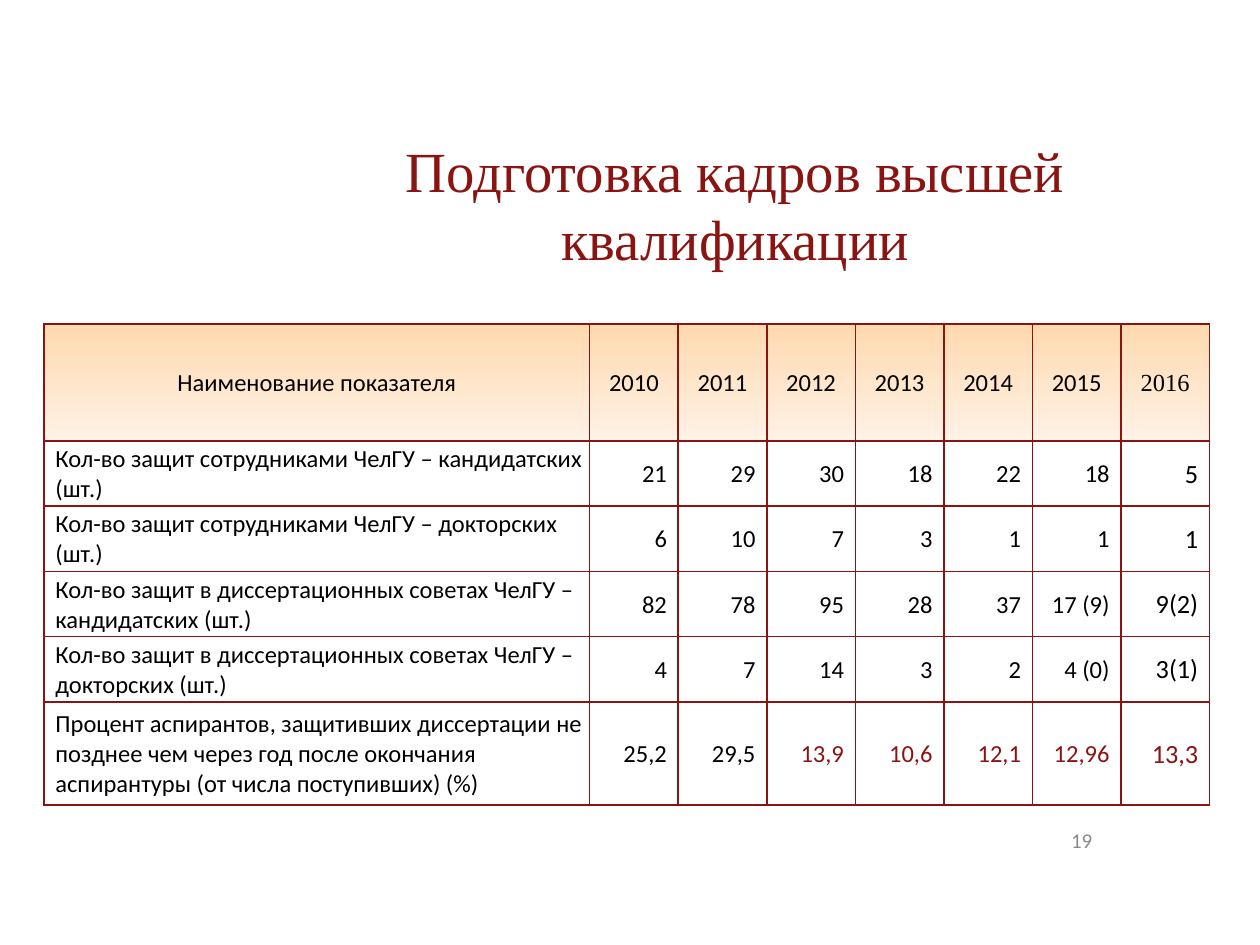
"""Build a slide with a table of postgraduate thesis defences by year."""
import pptx
import pptx.dml.color
import pptx.enum.text
import pptx.oxml.ns
import pptx.util
from lxml import etree

RGB = pptx.dml.color.RGBColor.from_string
ALIGN = pptx.enum.text.PP_ALIGN
MIDDLE = pptx.enum.text.MSO_ANCHOR.MIDDLE

THEME = {
    "accent": "8A1411", "text": "000000", "muted": "898989",
    "header": ("FFD9AF", "FFF2E6"),
    "body": "Calibri", "serif": "Times New Roman",
    "title_size": 32.4, "cell_size": 14, "latest_size": 15, "number_size": 12,
}

ROWS = [
    ["Наименование показателя", "2010", "2011", "2012", "2013", "2014", "2015", "2016"],
    ["Кол-во защит сотрудниками ЧелГУ – кандидатских (шт.)",
     "21", "29", "30", "18", "22", "18", "5"],
    ["Кол-во защит сотрудниками ЧелГУ – докторских (шт.)",
     "6", "10", "7", "3", "1", "1", "1"],
    ["Кол-во защит в диссертационных советах ЧелГУ – кандидатских (шт.)",
     "82", "78", "95", "28", "37", "17 (9)", "9(2)"],
    ["Кол-во защит в диссертационных советах ЧелГУ – докторских (шт.)",
     "4", "7", "14", "3", "2", "4 (0)", "3(1)"],
    ["Процент аспирантов, защитивших диссертации не позднее чем через год "
     "после окончания аспирантуры (от числа поступивших) (%)",
     "25,2", "29,5", "13,9", "10,6", "12,1", "12,96", "13,3"],
]

prs = pptx.Presentation()
prs.slide_width, prs.slide_height = pptx.util.Inches(10), pptx.util.Inches(7.5)
UNIT = prs.slide_width / 100


def grid(*cells):
    return [round(c * UNIT) for c in cells]


def write(tf, text, size, color, font, align, margins):
    tf.margin_left, tf.margin_top, tf.margin_right, tf.margin_bottom = map(pptx.util.Inches, margins)
    p = tf.paragraphs[0]
    p.add_run().text = text
    p.alignment = align
    p.font.size = pptx.util.Pt(size)
    p.font.name = font
    p.font.color.rgb = RGB(color)


s = prs.slides.add_slide(prs.slide_layouts[5])
title = s.shapes.title
title.left, title.top, title.width, title.height = grid(18.5, 9.9, 79.7, 12.5)
tf = title.text_frame
tf.vertical_anchor = MIDDLE
tf.word_wrap = True
tf.auto_size = pptx.enum.text.MSO_AUTO_SIZE.NONE
write(tf, "Подготовка кадров высшей квалификации", THEME["title_size"],
      THEME["accent"], THEME["serif"], ALIGN.CENTER, [0.05] * 4)

widths = grid(43.3, *[7.03] * 7)
heights = grid(9.3, *[5.18] * 4, 8.2)
left, top = grid(3.5, 25.7)
table = s.shapes.add_table(len(heights), len(widths), left, top, sum(widths), sum(heights)).table
table.first_row = table.horz_banding = False
for column, width in zip(table.columns, widths):
    column.width = width
for row, height in zip(table.rows, heights):
    row.height = height

last_row, last_col = len(heights) - 1, len(widths) - 1
for i, values in enumerate(ROWS):
    for j, value in enumerate(values):
        cell = table.cell(i, j)
        cell.vertical_anchor = MIDDLE
        tc_pr = cell._tc.get_or_add_tcPr()
        for edge in ("a:lnL", "a:lnR", "a:lnT", "a:lnB"):
            ln = etree.SubElement(tc_pr, pptx.oxml.ns.qn(edge), w=str(pptx.util.Pt(1)))
            solid = etree.SubElement(ln, pptx.oxml.ns.qn("a:solidFill"))
            etree.SubElement(solid, pptx.oxml.ns.qn("a:srgbClr"), val=THEME["accent"])
        size, color, font = THEME["cell_size"], THEME["text"], THEME["body"]
        if i == 0:
            cell.fill.gradient()
            cell.fill.gradient_angle = 270
            for stop, shade in zip(cell.fill.gradient_stops, THEME["header"]):
                stop.color.rgb = RGB(shade)
            align, pad_left, pad_right = ALIGN.CENTER, 0.01, 0.01
            font = THEME["serif"] if j == last_col else font
        else:
            cell.fill.background()
            align, pad_left, pad_right = (ALIGN.RIGHT, 0.01, 0.09) if j else (ALIGN.LEFT, 0.09, 0.01)
            size = THEME["latest_size"] if j == last_col else size
            color = THEME["accent"] if i == last_row and j > 2 else color
        write(cell.text_frame, value, size, color, font, align, [0, 0, 0, 0])
        cell.margin_left, cell.margin_right = pptx.util.Inches(pad_left), pptx.util.Inches(pad_right)
        cell.margin_top, cell.margin_bottom = pptx.util.Inches(0.01), 0

tf = s.shapes.add_textbox(*grid(84.5, 65.2, 2.7, 3)).text_frame
tf.vertical_anchor = MIDDLE
tf.word_wrap = False
write(tf, "19", THEME["number_size"], THEME["muted"], THEME["body"], ALIGN.RIGHT, [0.05] * 4)

prs.save("out.pptx")
